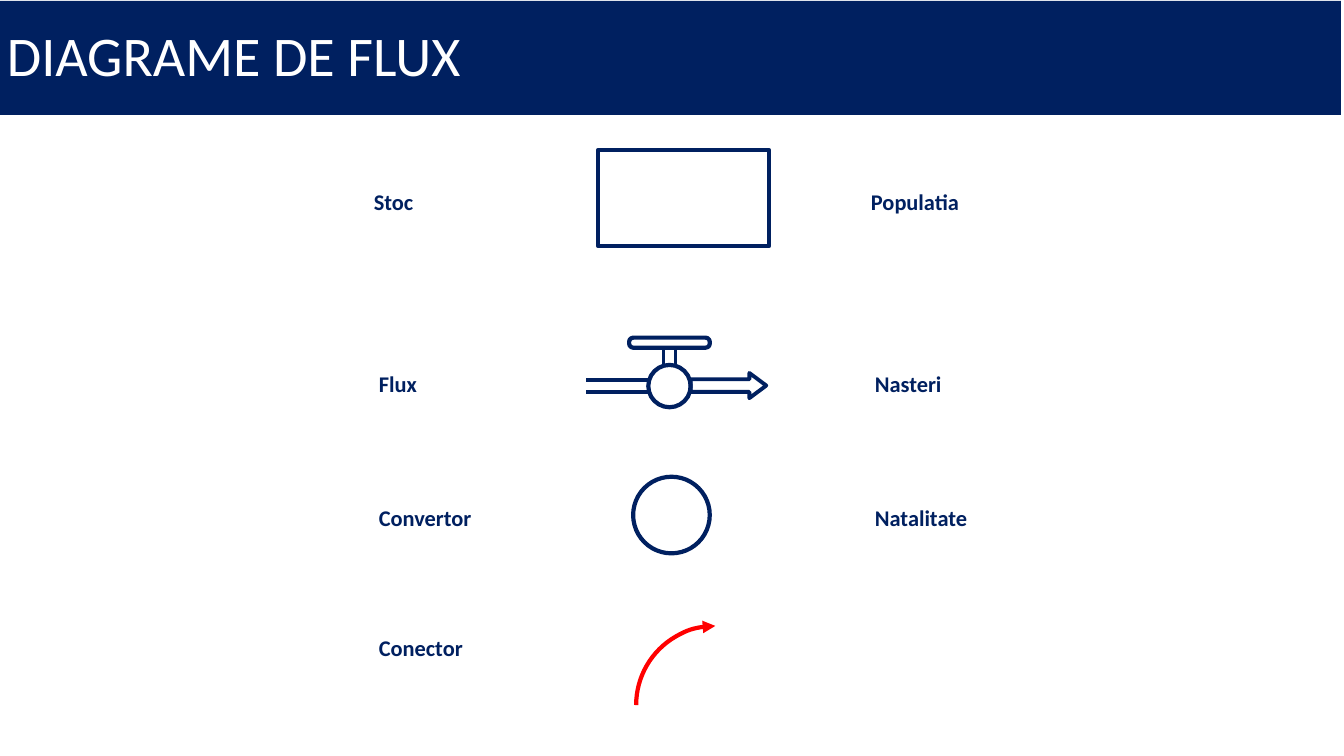
import pptx
import pptx.util
import pptx.dml.color
import pptx.enum.shapes
import pptx.enum.text
import pptx.oxml.ns
import pptx.oxml.xmlchemy

Inches = pptx.util.Inches
Shape = pptx.enum.shapes.MSO_SHAPE
Anchor = pptx.enum.text.MSO_ANCHOR
NAVY = pptx.dml.color.RGBColor(0x00, 0x20, 0x60)
RED = pptx.dml.color.RGBColor(0xFF, 0x00, 0x00)
WHITE = pptx.dml.color.RGBColor(0xFF, 0xFF, 0xFF)

presentation = pptx.Presentation()
presentation.slide_width = Inches(13.33)
presentation.slide_height = Inches(7.5)
slide = presentation.slides.add_slide(presentation.slide_layouts[6])


def write_text(shape, text, size=16, color=NAVY, bold=True, spacing=1.07, after=8,
               anchor=Anchor.TOP, wrap=False):
    frame = shape.text_frame
    frame.word_wrap = wrap
    frame.vertical_anchor = anchor
    paragraph = frame.paragraphs[0]
    paragraph.alignment = pptx.enum.text.PP_ALIGN.LEFT
    paragraph.line_spacing = spacing
    paragraph.space_after = pptx.util.Pt(after)
    run = paragraph.add_run()
    run.text = text
    run.font.name = "Calibri"
    run.font.size = pptx.util.Pt(size)
    run.font.bold = bold
    run.font.color.rgb = color


def add_outline(kind, left, top, width, height, color=NAVY, weight=3, adjustments=()):
    """Add an unfilled preset shape with a coloured outline."""
    shape = slide.shapes.add_shape(
        kind, Inches(left), Inches(top), Inches(width), Inches(height))
    shape.shadow.inherit = False
    shape.fill.background()
    shape.line.color.rgb = color
    shape.line.width = pptx.util.Pt(weight)
    for index, value in enumerate(adjustments):
        shape.adjustments[index] = value
    return shape


# Title band
title = add_outline(Shape.RECTANGLE, -0.03, 0.01, 13.33, 1.13)
title.fill.solid()
title.fill.fore_color.rgb = NAVY
title.line.fill.background()
write_text(title, "DIAGRAME DE FLUX", size=40, color=WHITE, bold=False, spacing=0.9,
           after=0, anchor=Anchor.MIDDLE, wrap=True)

# Labels: row top, then (text, left, width) for the name and its example
label_rows = [
    (1.8, [("Stoc", 3.61, 0.6), ("Populatia", 8.54, 1.09)]),
    (3.6, [("Flux", 3.66, 0.59), ("Nasteri", 8.58, 0.87)]),
    (4.93, [("Convertor", 3.66, 1.14), ("Natalitate", 8.58, 1.13)]),
    (6.22, [("Conector", 3.66, 1.04)]),
]
for top, labels in label_rows:
    for text, left, width in labels:
        label = slide.shapes.add_textbox(
            Inches(left), Inches(top), Inches(width), Inches(0.34))
        write_text(label, text)

# Stock
add_outline(Shape.RECTANGLE, 5.93, 1.49, 1.7, 0.95)

# Flow valve, built around the centre of its body
valve_x, valve_y, radius = 6.64, 3.83, 0.21
add_outline(Shape.OVAL, valve_x - radius, valve_y - radius, 2 * radius, 2 * radius)
add_outline(Shape.ROUNDED_RECTANGLE, valve_x - 0.4, 3.35, 0.8, 0.1, adjustments=[0.41])
add_outline(Shape.RIGHT_ARROW, valve_x + radius, 3.7, 0.75, 0.25,
            weight=2.75, adjustments=[0.5, 0.67])
for offset in (-0.06, 0.06):
    stem = (valve_x + offset, 3.45, valve_x + offset, valve_y - radius)
    pipe = (6.44, valve_y + offset, 5.81, valve_y + offset)
    for ends in (stem, pipe):
        connector = slide.shapes.add_connector(
            pptx.enum.shapes.MSO_CONNECTOR.STRAIGHT, *map(Inches, ends))
        connector.line.color.rgb = NAVY
        connector.line.width = pptx.util.Pt(2.75)
        connector.element.spPr.append(pptx.oxml.xmlchemy.OxmlElement("a:effectLst"))

# Converter
add_outline(Shape.OVAL, 6.28, 4.73, 0.76, 0.76)

# Connector arc, mirrored, with its arrowhead at the top
arc = add_outline(Shape.ARC, 6.31, 6.21, 1.57, 1.57, color=RED)
arc.element.spPr.find(pptx.oxml.ns.qn("a:xfrm")).set("flipH", "1")
arrowhead = pptx.oxml.xmlchemy.OxmlElement("a:headEnd")
arrowhead.set("type", "triangle")
arc.element.spPr.find(pptx.oxml.ns.qn("a:ln")).append(arrowhead)

presentation.save("out.pptx")
